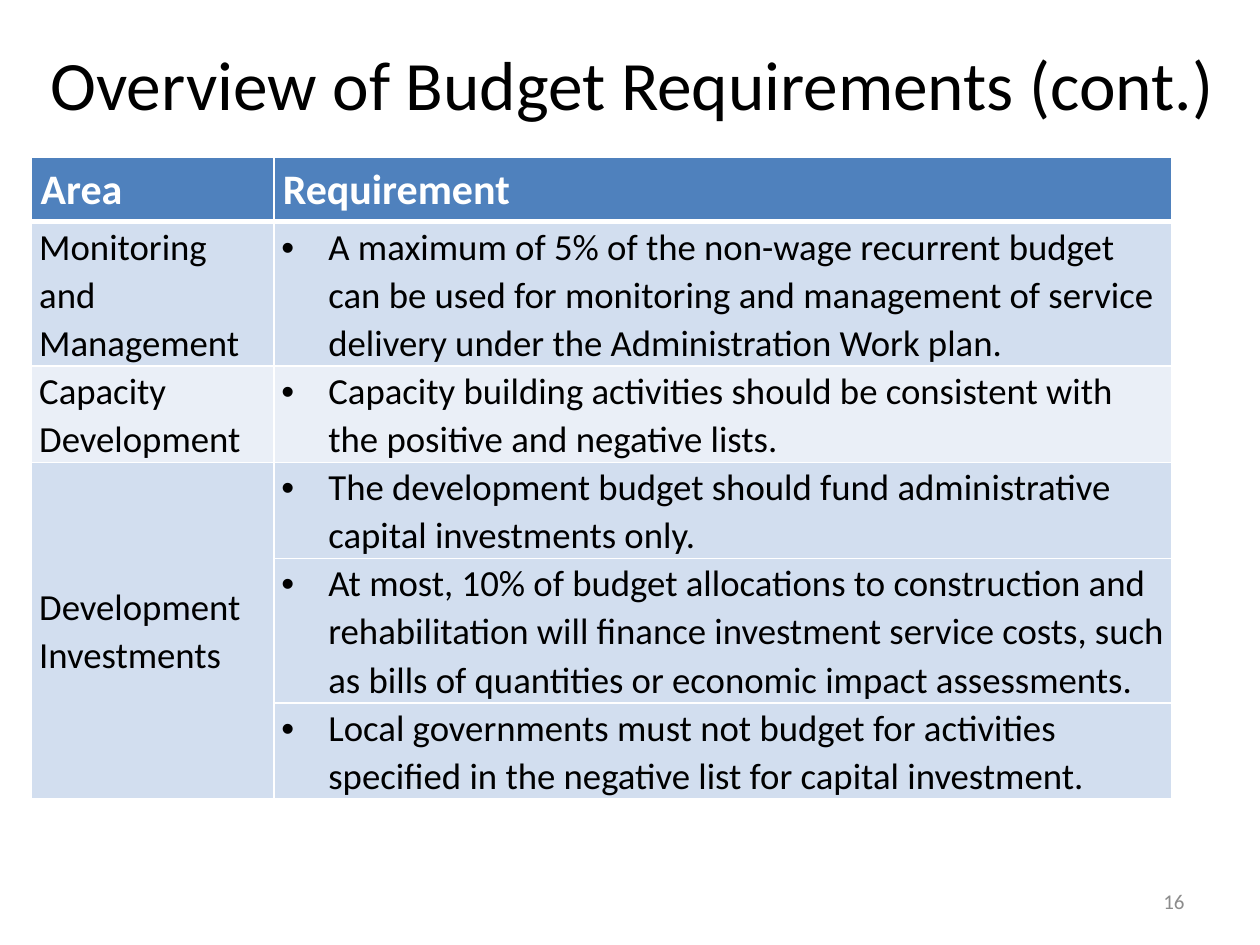
from pptx import Presentation
from pptx.dml.color import RGBColor
from pptx.enum.text import MSO_ANCHOR, PP_ALIGN
from pptx.oxml import parse_xml
from pptx.oxml.ns import nsdecls
from pptx.util import Cm, Pt

HEADINGS = ("Area", "Requirement")
AREAS = [
    ("Monitoring and Management", "D2DEEF", [
        ("A maximum of 5% of the non-wage recurrent budget can be used for monitoring "
         "and management of service delivery under the Administration Work plan.", 3)]),
    ("Capacity Development", "EAEFF7", [
        ("Capacity building activities should be consistent with the positive and "
         "negative lists.", 2)]),
    ("Development Investments", "D2DEEF", [
        ("The development budget should fund administrative capital investments only.", 2),
        ("At most, 10% of budget allocations to construction and rehabilitation will "
         "finance investment service costs, such as bills of quantities or economic "
         "impact assessments.", 3),
        ("Local governments must not budget for activities specified in the negative "
         "list for capital investment.", 2)]),
]
HEADER_HEIGHT, LINE_HEIGHT = 1.29, 0.97
HEADER_CELL = {"margin_left": Cm(0.18), "margin_right": Cm(0.18),
               "margin_top": Cm(0.13), "margin_bottom": Cm(0.13)}
BODY_CELL = {"margin_left": Cm(0.15), "margin_right": Cm(0.15), "margin_top": 0,
             "margin_bottom": 0, "vertical_anchor": MSO_ANCHOR.MIDDLE}
HEADER_FONT = {"size": Pt(24), "bold": True}
BODY_FONT = {"size": Pt(21), "bold": False}


def color(value):
    """Turn a hex string into a colour."""
    return RGBColor.from_string(value)


def apply(target, formats):
    """Set every attribute named in a dict of format values."""
    for name, value in formats.items():
        setattr(target, name, value)


def write(frame, text, ink, font):
    """Write one run into the first paragraph and return the paragraph."""
    para = frame.paragraphs[0]
    span = para.add_run()
    span.text = text
    apply(span.font, {"name": "Calibri", **font})
    span.font.color.rgb = color(ink)
    return para


def add_label(page, box, text, ink, size, align):
    """Place one line of text, vertically centred in a box."""
    frame = page.shapes.add_textbox(*map(Cm, box)).text_frame
    apply(frame, {"word_wrap": True, "vertical_anchor": MSO_ANCHOR.MIDDLE})
    write(frame, text, ink, {"size": Pt(size)}).alignment = align


def style_cell(cell, fill, formats, bottom=1):
    """Give a cell its margins, white borders and fill."""
    apply(cell, formats)
    properties = cell._tc.get_or_add_tcPr()
    for side, width in (("L", 1), ("R", 1), ("T", 1), ("B", bottom)):
        properties.append(parse_xml(
            f'<a:ln{side} {nsdecls("a")} w="{Pt(width)}"><a:solidFill>'
            f'<a:srgbClr val="FFFFFF"/></a:solidFill></a:ln{side}>'))
    cell.fill.solid()
    cell.fill.fore_color.rgb = color(fill)


def add_bullet(para):
    """Give a paragraph a round bullet with a hanging indent."""
    properties = para._p.get_or_add_pPr()
    indent = Cm(0.95)
    properties.set("marL", str(indent))
    properties.set("indent", str(-indent))
    properties.append(parse_xml(f'<a:buFont {nsdecls("a")} typeface="Arial"/>'))
    properties.append(parse_xml(f'<a:buChar {nsdecls("a")} char="•"/>'))


def add_requirements(page, box, area_width):
    """Build the table of areas and their requirements."""
    left, top, width = box
    heights = [HEADER_HEIGHT] + [lines * LINE_HEIGHT for _, _, items in AREAS
                                 for _, lines in items]
    table = page.shapes.add_table(len(heights), len(HEADINGS), Cm(left), Cm(top),
                                  Cm(width), Cm(sum(heights))).table
    table.horz_banding = False
    for column, size in zip(table.columns, (area_width, width - area_width)):
        column.width = Cm(size)
    for row, height in zip(table.rows, heights):
        row.height = Cm(height)
    for index, heading in enumerate(HEADINGS):
        cell = table.cell(0, index)
        style_cell(cell, "4F81BD", HEADER_CELL, bottom=3)
        write(cell.text_frame, heading, "FFFFFF", HEADER_FONT)

    first = 1
    for area, fill, items in AREAS:
        for row, (requirement, _) in enumerate(items, first):
            for index in range(len(HEADINGS)):
                style_cell(table.cell(row, index), fill, BODY_CELL)
            para = write(table.cell(row, 1).text_frame, requirement, "000000", BODY_FONT)
            para.line_spacing = 1.07
            add_bullet(para)
        cell = table.cell(first, 0)
        write(cell.text_frame, area, "000000", BODY_FONT).line_spacing = 1.07
        if len(items) > 1:
            cell.merge(table.cell(first + len(items) - 1, 0))
        first += len(items)


def main():
    """Build the slide and save the deck."""
    deck = Presentation()
    apply(deck, {"slide_width": Cm(25.4), "slide_height": Cm(19.05)})
    page = deck.slides.add_slide(deck.slide_layouts[6])
    add_label(page, (0.15, 0.08, 25.2, 3.18), "Overview of Budget Requirements (cont.)",
              "000000", 39.6, PP_ALIGN.CENTER)
    add_requirements(page, (0.64, 3.18, 22.98), 4.88)
    add_label(page, (18.2, 17.66, 5.93, 1.01), "16", "8C8C8C", 12, PP_ALIGN.RIGHT)
    deck.save("out.pptx")


if __name__ == "__main__":
    main()
